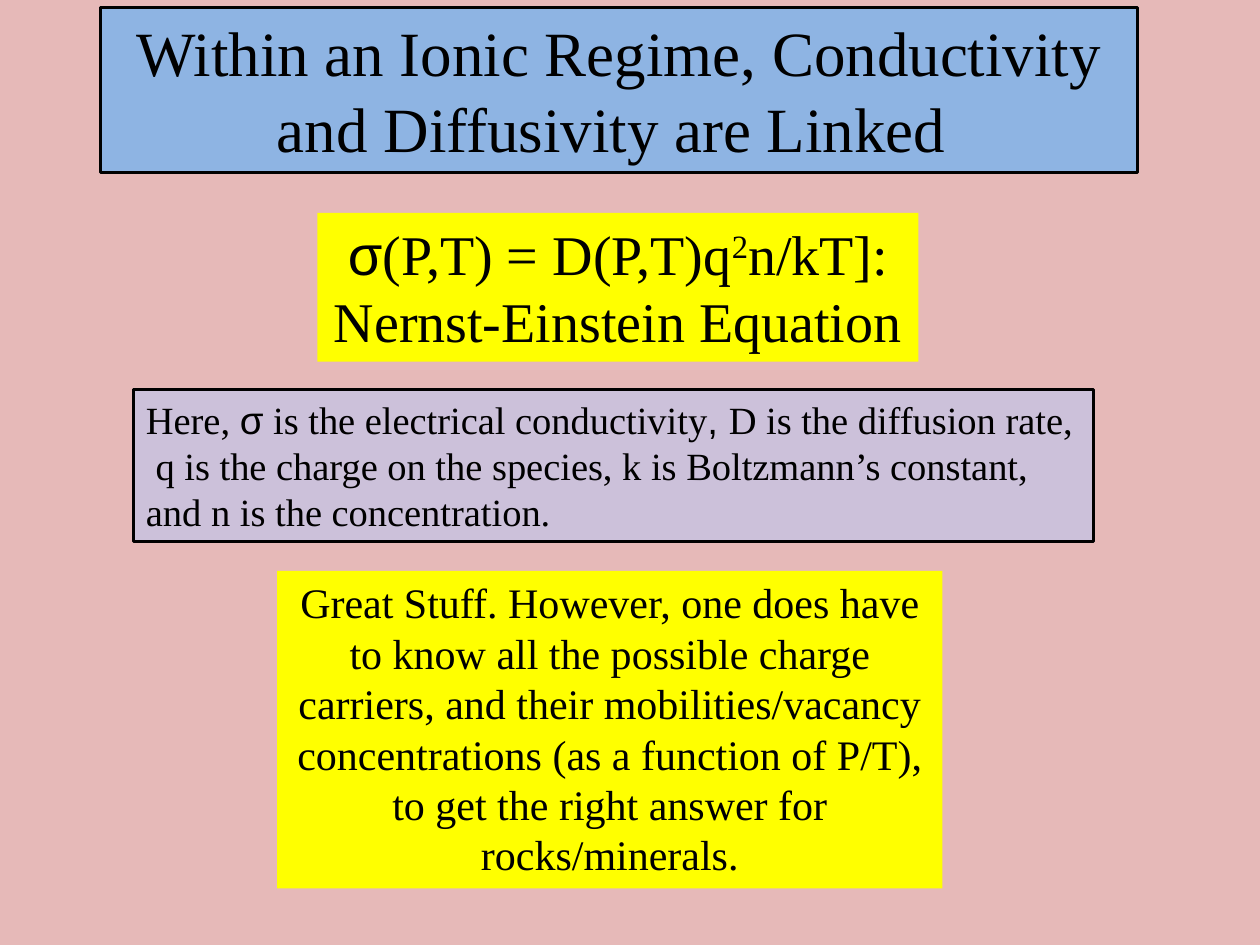
from dataclasses import dataclass
from typing import Optional

import pptx
import pptx.dml.color
import pptx.enum.text
import pptx.util

RGBColor = pptx.dml.color.RGBColor
PP_ALIGN = pptx.enum.text.PP_ALIGN

PINK = RGBColor(0xE6, 0xB9, 0xB8)
BLUE = RGBColor(0x8E, 0xB4, 0xE3)
LILAC = RGBColor(0xCC, 0xC1, 0xDA)
YELLOW = RGBColor(0xFF, 0xFF, 0x00)
BLACK = RGBColor(0x00, 0x00, 0x00)

SERIF, SANS = "Times New Roman", "Arial"
WIDTH, HEIGHT = pptx.util.Inches(10), pptx.util.Inches(7.5)


@dataclass
class Run:
    text: str
    font: str = SERIF
    superscript: bool = False


@dataclass
class Panel:
    # Left and width are percent of slide width, top and height of slide height
    left: float
    top: float
    width: float
    height: float
    fill: RGBColor
    size: int
    paragraphs: list[list[Run]]
    align: PP_ALIGN = PP_ALIGN.CENTER
    outline: Optional[RGBColor] = None
    wrap: bool = True


def place(sp, panel: Panel) -> None:
    sp.left, sp.width = (int(WIDTH * v / 100) for v in (panel.left, panel.width))
    sp.top, sp.height = (int(HEIGHT * v / 100) for v in (panel.top, panel.height))


def write(tf, panel: Panel) -> None:
    tf.word_wrap = panel.wrap
    tf.auto_size = pptx.enum.text.MSO_AUTO_SIZE.SHAPE_TO_FIT_TEXT
    tf.vertical_anchor = pptx.enum.text.MSO_ANCHOR.TOP
    for i, runs in enumerate(panel.paragraphs):
        p = tf.add_paragraph() if i else tf.paragraphs[0]
        p.alignment = panel.align
        for run in runs:
            r = p.add_run()
            r.text = run.text
            r.font.name = run.font
            r.font.size = pptx.util.Pt(panel.size)
            r.font.color.rgb = BLACK
            if run.superscript:
                r._r.get_or_add_rPr().set("baseline", "30000")


def draw(sp, panel: Panel) -> None:
    place(sp, panel)
    sp.fill.solid()
    sp.fill.fore_color.rgb = panel.fill
    if panel.outline is not None:
        sp.line.color.rgb = panel.outline
        sp.line.width = pptx.util.Pt(1.5)
    write(sp.text_frame, panel)


TITLE = Panel(8, 0.8, 82.3, 17.47, BLUE, 36, [
    [Run("Within an Ionic Regime, Conductivity and Diffusivity are Linked ")],
], outline=BLACK)

PANELS = [
    # Meaning of the symbols
    Panel(10.6, 41.2, 76.2, 16.13, LILAC, 22, [
        [Run("Here, "), Run("σ", SANS), Run(" is the electrical conductivity"),
         Run(", ", SANS), Run("D is the diffusion rate,")],
        [Run(" q is the charge on the species, k is Boltzmann’s constant,")],
        [Run("and n is the concentration.")],
    ], align=PP_ALIGN.LEFT, outline=BLACK, wrap=False),
    # Equation
    Panel(25.2, 22.53, 47.7, 15.73, YELLOW, 32, [
        [Run("σ", SANS), Run("(P,T) = D(P,T)q"),
         Run("2", superscript=True), Run("n/kT]:")],
        [Run("Nernst-Einstein Equation")],
    ], wrap=False),
    # Caveat
    Panel(22, 60.4, 52.8, 33.6, YELLOW, 24, [
        [Run("Great Stuff. However, one does have to know all the possible "
             "charge carriers, and their mobilities/vacancy concentrations "
             "(as a function of P/T), to get the right answer for "
             "rocks/minerals.")],
    ]),
]


def main() -> None:
    prs = pptx.Presentation()
    prs.slide_width, prs.slide_height = WIDTH, HEIGHT
    s = prs.slides.add_slide(prs.slide_layouts[5])  # Title Only

    # Background
    s.background.fill.solid()
    s.background.fill.fore_color.rgb = PINK

    # Title and text panels
    draw(s.shapes.title, TITLE)
    for panel in PANELS:
        draw(s.shapes.add_textbox(0, 0, 0, 0), panel)

    prs.save("out.pptx")


if __name__ == "__main__":
    main()
